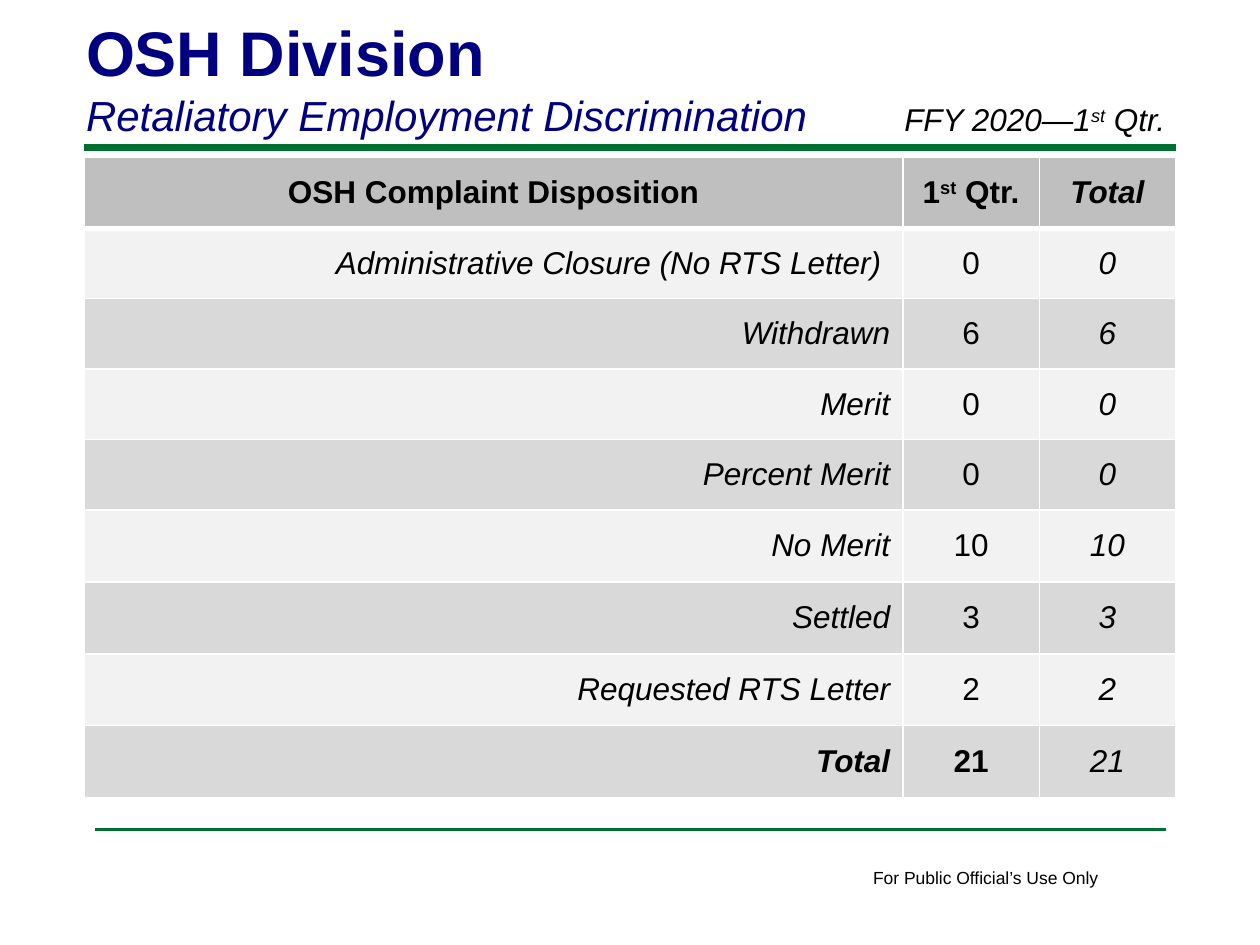
from dataclasses import dataclass

from lxml.etree import SubElement
from pptx import Presentation
from pptx.dml.color import RGBColor
from pptx.enum.shapes import MSO_CONNECTOR
from pptx.enum.text import MSO_ANCHOR, MSO_AUTO_SIZE, PP_ALIGN
from pptx.oxml.ns import qn
from pptx.util import Cm, Pt


@dataclass(frozen=True)
class Theme:
    font: str = "Arial"
    ink: str = "000000"
    navy: str = "000080"
    green: str = "007030"
    border: str = "FFFFFF"
    header: str = "BFBFBF"
    bands: tuple = ("F2F2F2", "D9D9D9")
    title: int = 36
    subtitle: int = 24
    body: int = 18
    note: int = 10


class SlideBuilder:
    def __init__(self, slide, theme):
        self.slide = slide
        self.theme = theme

    def paragraph(self, paragraph, text, size, color, bold=False, italic=False, align=PP_ALIGN.LEFT):
        base, *others = text.split("^")
        paragraph.text = base
        for piece in others:
            paragraph.add_run().text = piece
        paragraph.alignment = align
        for index, run in enumerate(paragraph.runs):
            run.font.name = self.theme.font
            run.font.size = Pt(size)
            run.font.bold = bold
            run.font.italic = italic
            run.font.color.rgb = RGBColor.from_string(color)
            if index % 2:
                run._r.get_or_add_rPr().set("baseline", "30000")

    def title(self, heading, subheading, left, top, width, height):
        title = self.slide.shapes.title
        title.left, title.top, title.width, title.height = map(Cm, (left, top, width, height))
        frame = title.text_frame
        frame.text = f"{heading}\n{subheading}"
        frame.word_wrap = True
        frame.auto_size = MSO_AUTO_SIZE.SHAPE_TO_FIT_TEXT
        frame.vertical_anchor = MSO_ANCHOR.TOP
        division, topic = frame.paragraphs
        self.paragraph(division, heading, self.theme.title, self.theme.navy, bold=True)
        self.paragraph(topic, subheading, self.theme.subtitle, self.theme.navy, italic=True)

    def text(self, text, left, top, width, height, size, italic=False, wrap=True):
        frame = self.slide.shapes.add_textbox(*map(Cm, (left, top, width, height))).text_frame
        frame.word_wrap = wrap
        frame.auto_size = MSO_AUTO_SIZE.SHAPE_TO_FIT_TEXT
        self.paragraph(frame.paragraphs[0], text, size, self.theme.ink, italic=italic)

    def rule(self, left, right, height, weight):
        rule = self.slide.shapes.add_connector(
            MSO_CONNECTOR.STRAIGHT, Cm(left), Cm(height), Cm(right), Cm(height))
        rule.line.color.rgb = RGBColor.from_string(self.theme.green)
        rule.line.width = Pt(weight)
        SubElement(rule._element.spPr, qn("a:effectLst"))

    def borders(self, cell, top, bottom):
        properties = cell._tc.get_or_add_tcPr()
        for side, weight in (("L", 1), ("R", 1), ("T", top), ("B", bottom)):
            edge = SubElement(properties, qn(f"a:ln{side}"), w=str(Pt(weight)))
            SubElement(SubElement(edge, qn("a:solidFill")), qn("a:srgbClr"), val=self.theme.border)

    def table(self, rows, left, top, widths, heights):
        table = self.slide.shapes.add_table(
            len(rows), len(widths), Cm(left), Cm(top), Cm(sum(widths)), Cm(sum(heights))).table
        table.horz_banding = False
        for column, width in zip(table.columns, widths):
            column.width = Cm(width)
        for row, height in zip(table.rows, heights):
            row.height = Cm(height)
        last_row, last_column = len(rows) - 1, len(widths) - 1
        for r, values in enumerate(rows):
            fill = self.theme.bands[(r - 1) % 2] if r else self.theme.header
            for c, value in enumerate(values):
                cell = table.cell(r, c)
                self.borders(cell, top=3 if r == 1 else 1, bottom=1 if r else 3)
                cell.fill.solid()
                cell.fill.fore_color.rgb = RGBColor.from_string(fill)
                cell.vertical_anchor = MSO_ANCHOR.MIDDLE
                is_label = r > 0 and c == 0
                self.paragraph(
                    cell.text_frame.paragraphs[0], value, self.theme.body, self.theme.ink,
                    bold=r == 0 or (r == last_row and c < last_column),
                    italic=is_label or c == last_column,
                    align=PP_ALIGN.RIGHT if is_label else PP_ALIGN.CENTER)


def main():
    presentation = Presentation()
    presentation.slide_width, presentation.slide_height = Cm(25.4), Cm(19.05)
    theme = Theme()
    builder = SlideBuilder(presentation.slides.add_slide(presentation.slide_layouts[5]), theme)

    dispositions = [
        ("Administrative Closure (No RTS Letter) ", 0),
        ("Withdrawn", 6),
        ("Merit", 0),
        ("Percent Merit", 0),
        ("No Merit", 10),
        ("Settled", 3),
        ("Requested RTS Letter", 2),
        ("Total", 21),
    ]
    rows = [("OSH Complaint Disposition", "1^st^ Qtr.", "Total")]
    rows += [(label, str(count), str(count)) for label, count in dispositions]

    builder.rule(1.7, 23.7, 2.97, weight=4)
    builder.rule(1.91, 23.5, 16.72, weight=2)
    builder.text("For Public Official’s Use Only", 17.35, 17.35, 5.11, 0.69, theme.note, wrap=False)
    builder.table(rows, 1.7, 3.18, widths=[16.5, 2.75, 2.75], heights=[1.42] * 5 + [1.45] * 4)
    builder.title("OSH Division", "Retaliatory Employment Discrimination", 1.48, 0.15, 20.96, 2.82)
    builder.text("FFY 2020—1^st^ Qtr.", 17.98, 1.9, 6.35, 1.02, theme.body, italic=True)

    presentation.save("out.pptx")


if __name__ == "__main__":
    main()
